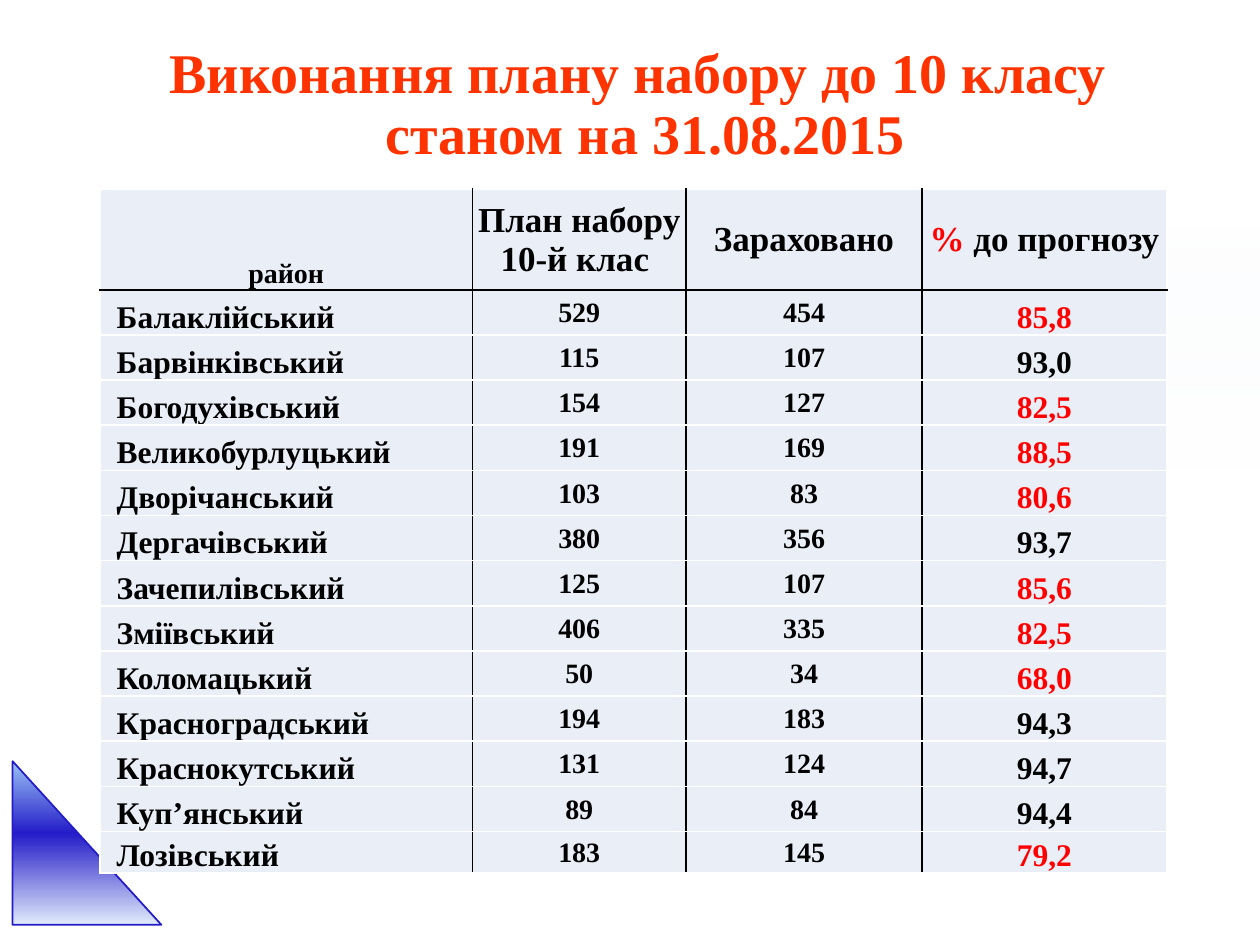
from lxml import etree
from pptx import Presentation
from pptx.dml.color import RGBColor
from pptx.enum.shapes import MSO_SHAPE
from pptx.enum.text import MSO_ANCHOR, MSO_AUTO_SIZE, PP_ALIGN
from pptx.oxml.ns import qn
from pptx.util import Pt

LEFT, CENTER = PP_ALIGN.LEFT, PP_ALIGN.CENTER
MIDDLE, BOTTOM = MSO_ANCHOR.MIDDLE, MSO_ANCHOR.BOTTOM
NO_AUTOFIT = MSO_AUTO_SIZE.NONE
RECTANGLE, RIGHT_TRIANGLE = MSO_SHAPE.RECTANGLE, MSO_SHAPE.RIGHT_TRIANGLE
TITLE_ONLY = 5

TITLE = "Виконання плану набору до 10 класу \vстаном на 31.08.2015"
HEADERS = [
    ["район"],
    ["План набору ", "10-й клас "],
    ["Зараховано"],
    ["% до прогнозу"],
]
DISTRICTS = [
    ("Балаклійський", 529, 454, "85,8"),
    ("Барвінківський", 115, 107, "93,0"),
    ("Богодухівський", 154, 127, "82,5"),
    ("Великобурлуцький", 191, 169, "88,5"),
    ("Дворічанський", 103, 83, "80,6"),
    ("Дергачівський", 380, 356, "93,7"),
    ("Зачепилівський", 125, 107, "85,6"),
    ("Зміївський", 406, 335, "82,5"),
    ("Коломацький", 50, 34, "68,0"),
    ("Красноградський", 194, 183, "94,3"),
    ("Краснокутський", 131, 124, "94,7"),
    ("Куп’янський", 89, 84, "94,4"),
    ("Лозівський", 183, 145, "79,2"),
]
LOW_PERCENT = 90

THEME = {
    "font": "Times New Roman",
    "title": "FF3300", "text": "000000", "alert": "FF0000",
    "cell": "EAEFF7", "grid": "000000", "gap": "FFFFFF", "triangle": "241CC8",
    "title_size": 32, "header_size": 20, "name_size": 18, "number_size": 16,
    "panel_stops": [(0, "F7FAFD", 0), (74, "FFFFFF", 100), (100, "FFFFFF", 100)],
    "triangle_stops": [(0, "9AC3F5", 100), (44, "241CC8", 100), (100, "E1EBFB", 100)],
}

COLUMN_WIDTHS = [213, 122, 135, 139.8]
ROW_HEIGHTS = [57.6] + [25.8] * 12 + [23.8]
TABLE_LEFT, TABLE_TOP = 57, 108
CELL_INSET, NAME_INSET = 0.7, 9.7


def write(frame, lines, size, color=THEME["text"], align=CENTER, spacing=None, lead_color=None):
    """Write one paragraph per line; lead_color marks the first character of each."""
    for index, line in enumerate(lines):
        para = frame.paragraphs[0] if index == 0 else frame.add_paragraph()
        para.alignment = align
        if spacing:
            para.line_spacing = spacing
        spans = [(line[:1], lead_color), (line[1:], color)] if lead_color else [(line, color)]
        for part, part_color in spans:
            for number, piece in enumerate(part.split("\v")):
                if number:
                    para.add_line_break()
                span = para.add_run()
                span.text = piece
                span.font.name = THEME["font"]
                span.font.size = Pt(size)
                span.font.bold = True
                span.font.color.rgb = RGBColor.from_string(part_color)


def add_gradient_shape(slide, kind, box, stops):
    """Add a shape filled from top to bottom with (percent, colour, opacity) stops."""
    shape = slide.shapes.add_shape(kind, *(Pt(length) for length in box))
    shape.shadow.inherit = False
    shape.fill.gradient()
    gradient = shape._element.spPr.find(qn("a:gradFill"))
    for child in list(gradient):
        gradient.remove(child)
    stop_list = etree.SubElement(gradient, qn("a:gsLst"))
    for percent, color, opacity in stops:
        stop = etree.SubElement(stop_list, qn("a:gs"), pos=str(percent * 1000))
        fill = etree.SubElement(stop, qn("a:srgbClr"), val=color)
        if opacity < 100:
            etree.SubElement(fill, qn("a:alpha"), val=str(opacity * 1000))
    etree.SubElement(gradient, qn("a:lin"), ang="5400000", scaled="0")
    return shape


def set_borders(cell, colors):
    """Draw the left, right, top and bottom borders in the given colours."""
    properties = cell._tc.get_or_add_tcPr()
    for index, (side, color) in enumerate(zip("LRTB", colors)):
        line = etree.Element(qn(f"a:ln{side}"), w=str(Pt(1)))
        fill = etree.SubElement(line, qn("a:solidFill"))
        etree.SubElement(fill, qn("a:srgbClr"), val=color)
        properties.insert(index, line)


def add_title(slide):
    title = slide.shapes.title
    title.left, title.top, title.width, title.height = Pt(42.5), Pt(21.6), Pt(652.3), Pt(77.8)
    frame = title.text_frame
    frame.word_wrap = True
    frame.auto_size = NO_AUTOFIT
    frame.vertical_anchor = MIDDLE
    write(frame, [TITLE], THEME["title_size"], color=THEME["title"], spacing=0.9)


def fill_header(cell, column, lines):
    cell.vertical_anchor = MIDDLE if column else BOTTOM
    size = THEME["header_size"] if column else THEME["number_size"]
    lead_color = THEME["alert"] if lines[0].startswith("%") else None
    write(cell.text_frame, lines, size, lead_color=lead_color)


def fill_value(cell, column, value):
    is_name, is_percent = column == 0, column == len(HEADERS) - 1
    is_low = is_percent and float(value.replace(",", ".")) < LOW_PERCENT
    cell.vertical_anchor = BOTTOM if is_name or is_percent else MIDDLE
    if is_name:
        cell.margin_left = Pt(NAME_INSET)
    write(cell.text_frame, [str(value)],
          THEME["name_size" if is_name or is_percent else "number_size"],
          color=THEME["alert" if is_low else "text"],
          align=LEFT if is_name else CENTER)


def add_district_table(slide):
    rows = [HEADERS] + DISTRICTS
    table = slide.shapes.add_table(
        len(rows), len(HEADERS), Pt(TABLE_LEFT), Pt(TABLE_TOP),
        Pt(sum(COLUMN_WIDTHS)), Pt(sum(ROW_HEIGHTS))).table
    table.first_row = table.horz_banding = False
    for column, width in zip(table.columns, COLUMN_WIDTHS):
        column.width = Pt(width)
    for row, height in zip(table.rows, ROW_HEIGHTS):
        row.height = Pt(height)

    grid, gap = THEME["grid"], THEME["gap"]
    last_column = len(HEADERS) - 1
    for row, values in enumerate(rows):
        for column, value in enumerate(values):
            cell = table.cell(row, column)
            cell.margin_left = cell.margin_right = cell.margin_top = Pt(CELL_INSET)
            cell.margin_bottom = 0
            cell.fill.solid()
            cell.fill.fore_color.rgb = RGBColor.from_string(THEME["cell"])
            set_borders(cell, [
                grid if column > 0 else gap,
                grid if column < last_column else gap,
                grid if row == 1 else gap,
                grid if row == 0 else gap,
            ])
            if row == 0:
                fill_header(cell, column, value)
            else:
                fill_value(cell, column, value)


def main():
    deck = Presentation()
    deck.slide_width, deck.slide_height = Pt(720), Pt(540)
    slide = deck.slides.add_slide(deck.slide_layouts[TITLE_ONLY])
    panel = add_gradient_shape(slide, RECTANGLE, (603.4, 129.6, 116.6, 139), THEME["panel_stops"])
    panel.line.fill.background()
    add_title(slide)
    triangle = add_gradient_shape(slide, RIGHT_TRIANGLE, (7.2, 435, 85, 93.5), THEME["triangle_stops"])
    triangle.line.color.rgb = RGBColor.from_string(THEME["triangle"])
    triangle.line.width = Pt(1)
    add_district_table(slide)
    deck.save("out.pptx")


if __name__ == "__main__":
    main()
